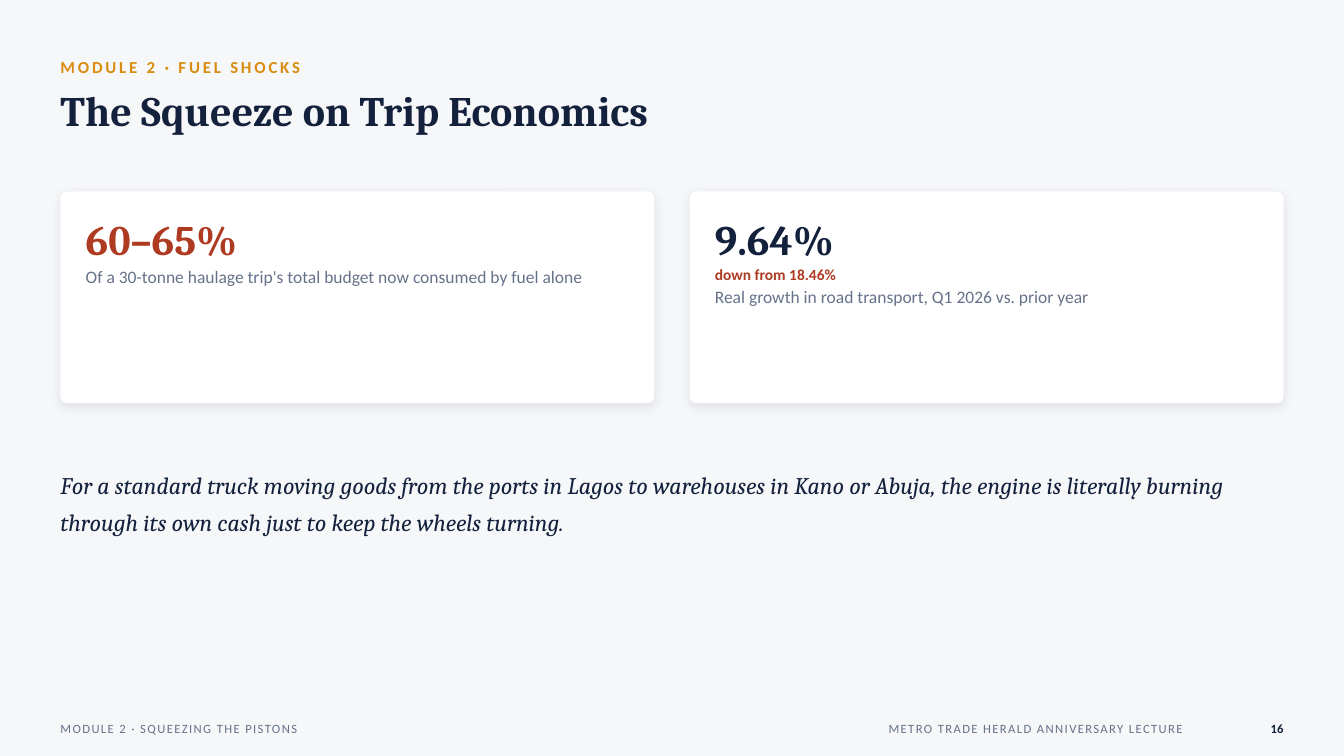
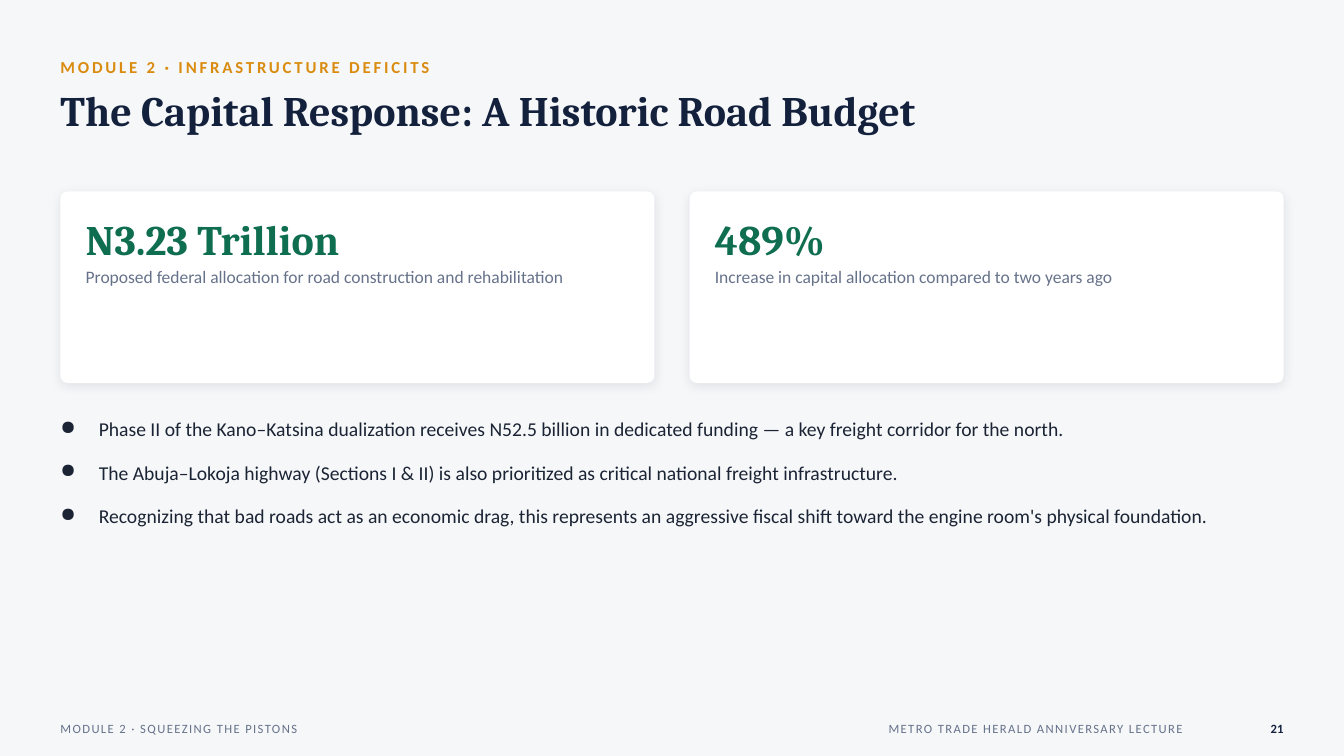
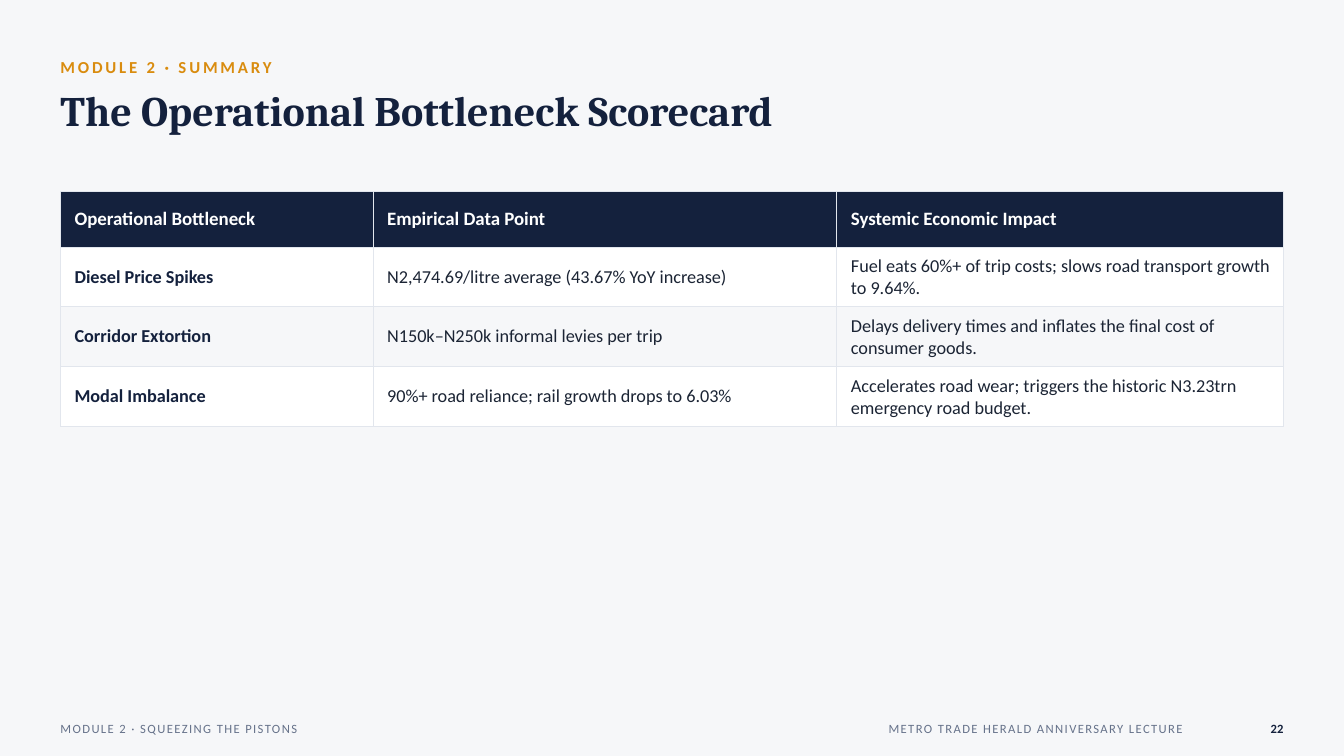
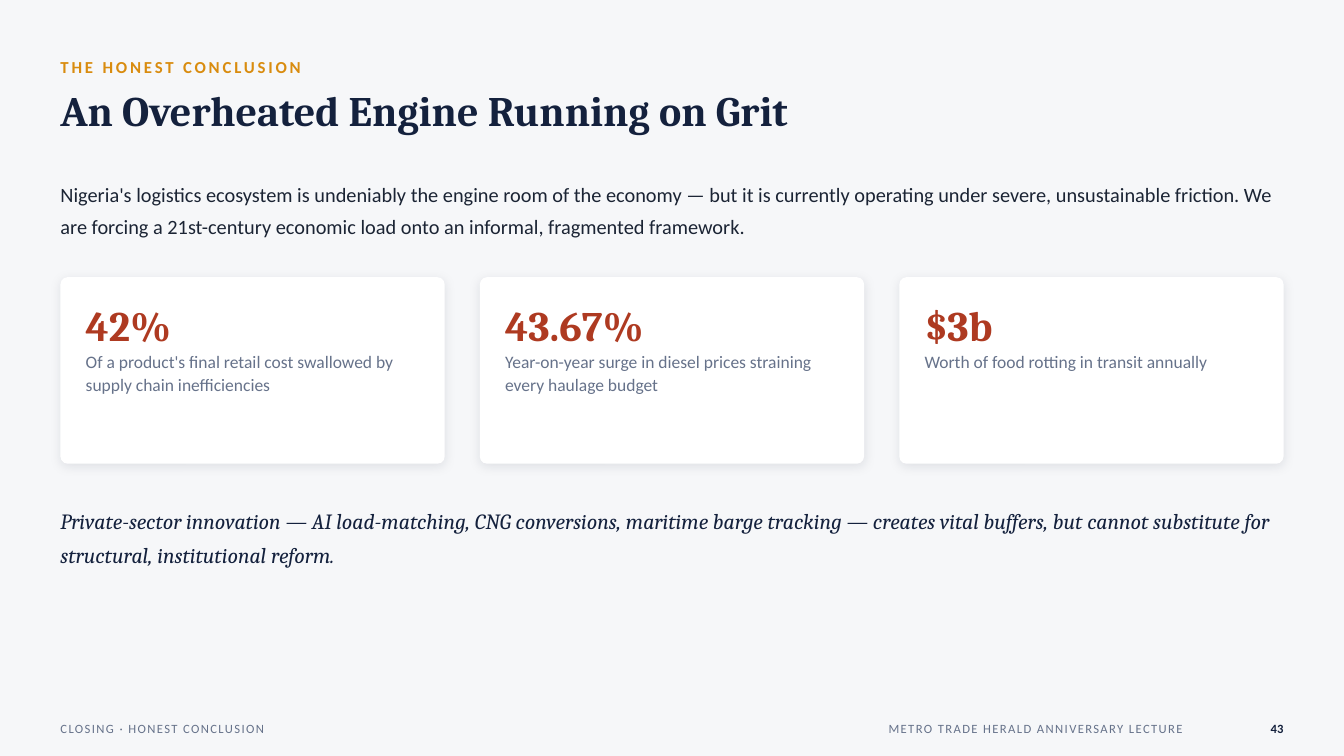
from lxml import etree
from pptx import Presentation
from pptx.dml.color import RGBColor
from pptx.enum.shapes import MSO_SHAPE
from pptx.enum.text import MSO_ANCHOR, PP_ALIGN
from pptx.oxml.ns import qn
from pptx.util import Inches, Pt

ROUNDED = MSO_SHAPE.ROUNDED_RECTANGLE
TOP, MIDDLE = MSO_ANCHOR.TOP, MSO_ANCHOR.MIDDLE
LEFT, RIGHT = PP_ALIGN.LEFT, PP_ALIGN.RIGHT

COLORS = {
    "paper": "F6F7F9", "white": "FFFFFF", "navy": "14213D", "ink": "1B2434",
    "slate": "66728A", "amber": "D98C0F", "rust": "AE3A21", "green": "0F6E4F",
    "border": "E2E6ED", "shadow": "0D1730",
}
SANS, SERIF = "Calibri", "Cambria"
STYLES = {
    "kicker": {"name": SANS, "size": 12, "color": "amber", "bold": True, "tracking": 2},
    "title": {"name": SERIF, "size": 30, "color": "navy", "bold": True},
    "caption": {"name": SANS, "size": 12.5, "color": "slate"},
    "change": {"name": SANS, "size": 11, "color": "rust", "bold": True},
    "body": {"name": SANS, "size": 14, "color": "ink"},
    "intro": {"name": SANS, "size": 14.5, "color": "ink"},
    "quote": {"name": SERIF, "size": 17, "color": "navy", "italic": True},
    "closing": {"name": SERIF, "size": 15.5, "color": "navy", "italic": True},
    "header": {"name": SANS, "size": 13.5, "color": "white", "bold": True},
    "row label": {"name": SANS, "size": 13, "color": "navy", "bold": True},
    "cell": {"name": SANS, "size": 13, "color": "ink"},
    "footer": {"name": SANS, "size": 9, "color": "slate", "tracking": 1},
    "page": {"name": SANS, "size": 9, "color": "navy", "bold": True},
}
for accent in ("navy", "rust", "green"):
    STYLES[f"{accent} figure"] = {**STYLES["title"], "color": accent}

MARGIN, WIDTH = 0.6, 12.13
CARD_GAP, CARD_RADIUS, CARD_PAD_X, CARD_PAD_Y = 0.35, 0.07, 0.25, 0.18
EVENT = "METRO TRADE HERALD ANNIVERSARY LECTURE"
MODULE = "MODULE 2 · SQUEEZING THE PISTONS"


def rgb(color):
    return RGBColor.from_string(COLORS[color])


def add_color(parent, color):
    """Append a solid colour element and return it."""
    return etree.SubElement(parent, qn("a:srgbClr"), val=COLORS[color])


class Deck:
    def __init__(self):
        self.prs = Presentation()
        self.prs.slide_width, self.prs.slide_height = Inches(13.33), Inches(7.5)
        self.slide = None

    def add_slide(self, kicker, title, section, page):
        self.slide = self.prs.slides.add_slide(self.prs.slide_layouts[6])
        background = self.slide.background.fill
        background.solid()
        background.fore_color.rgb = rgb("paper")
        self.text(MARGIN, 0.5, WIDTH, 0.32, [(kicker, "kicker")], MIDDLE)
        self.text(MARGIN, 0.84, WIDTH, 0.75, [(title, "title")])
        for left, width, words, style, align in (
            (MARGIN, 7, section, "footer", LEFT),
            (8.53, 3.2, EVENT, "footer", RIGHT),
            (12.23, 0.5, str(page), "page", RIGHT),
        ):
            self.text(left, 7.08, width, 0.3, [(words, style)], MIDDLE, {"alignment": align})

    def styled_run(self, paragraph, words, style):
        run = paragraph.add_run()
        run.text = words
        for key, value in STYLES[style].items():
            if key == "color":
                run.font.color.rgb = rgb(value)
            elif key == "tracking":
                run._r.get_or_add_rPr().set("spc", str(value * 100))
            else:
                setattr(run.font, key, Pt(value) if key == "size" else value)

    def text(self, left, top, width, height, lines, anchor=TOP, layout=None):
        """Add a box with one paragraph for each (words, style) pair."""
        box = self.slide.shapes.add_textbox(*map(Inches, (left, top, width, height)))
        frame = box.text_frame
        frame.word_wrap, frame.vertical_anchor = True, anchor
        for side in ("left", "top", "right", "bottom"):
            setattr(frame, f"margin_{side}", 0)
        for index, (words, style) in enumerate(lines):
            paragraph = frame.add_paragraph() if index else frame.paragraphs[0]
            for key, value in (layout or {}).items():
                setattr(paragraph, key, value)
            self.styled_run(paragraph, words, style)
        return frame

    def statement(self, top, height, words, style):
        self.text(MARGIN, top, WIDTH, height, [(words, style)], MIDDLE, {"line_spacing": 1.3})

    def bullets(self, top, height, items):
        frame = self.text(MARGIN, top, WIDTH, height, [(item, "body") for item in items],
                          layout={"line_spacing": 1.15, "space_after": Pt(12)})
        for paragraph in frame.paragraphs:
            properties = paragraph._p.get_or_add_pPr()
            properties.set("marL", str(Inches(0.38)))
            properties.set("indent", str(Inches(-0.38)))
            etree.SubElement(properties, qn("a:buChar"), char="●")

    def cards(self, top, height, contents):
        """Spread equal cards over the full content width."""
        width = (WIDTH - CARD_GAP * (len(contents) - 1)) / len(contents)
        for index, lines in enumerate(contents):
            left = MARGIN + index * (width + CARD_GAP)
            card = self.slide.shapes.add_shape(ROUNDED, *map(Inches, (left, top, width, height)))
            card.adjustments[0] = CARD_RADIUS / height
            card.fill.solid()
            card.fill.fore_color.rgb = rgb("white")
            card.line.fill.background()
            self.soft_shadow(card)
            self.text(left + CARD_PAD_X, top + CARD_PAD_Y, width - 2 * CARD_PAD_X,
                      height - 2 * CARD_PAD_Y, lines, layout={"line_spacing": 1.08})

    def soft_shadow(self, shape):
        shape.shadow.inherit = False
        effects = shape._element.spPr.find(qn("a:effectLst"))
        shadow = etree.SubElement(effects, qn("a:outerShdw"), blurRad=str(Pt(8)),
                                  dist=str(Pt(2)), dir="5400000", algn="t", rotWithShape="0")
        etree.SubElement(add_color(shadow, "shadow"), qn("a:alpha"), val="10000")

    def table(self, top, row_height, column_widths, rows):
        table = self.slide.shapes.add_table(
            len(rows), len(column_widths), Inches(MARGIN), Inches(top),
            Inches(sum(column_widths)), Inches(row_height * len(rows))).table
        table.horz_banding = False
        for column, width in zip(table.columns, column_widths):
            column.width = Inches(width)
        for row_index, row in enumerate(rows):
            fill = "navy" if row_index == 0 else ("paper", "white")[row_index % 2]
            for column_index, words in enumerate(row):
                if row_index == 0:
                    style = "header"
                else:
                    style = "cell" if column_index else "row label"
                self.cell(table.cell(row_index, column_index), words, style, fill)

    def cell(self, cell, words, style, fill):
        margins = {"margin_left": 0.14, "margin_right": 0.14,
                   "margin_top": 0.08, "margin_bottom": 0.08}
        for key, value in margins.items():
            setattr(cell, key, Inches(value))
        cell.vertical_anchor = MIDDLE
        self.styled_run(cell.text_frame.paragraphs[0], words, style)
        properties = cell._tc.get_or_add_tcPr()
        for side in ("lnL", "lnR", "lnT", "lnB"):
            border = etree.SubElement(properties, qn(f"a:{side}"), w=str(Pt(0.75)))
            add_color(etree.SubElement(border, qn("a:solidFill")), "border")
        cell.fill.solid()
        cell.fill.fore_color.rgb = rgb(fill)


def main():
    deck = Deck()

    deck.add_slide("MODULE 2 · FUEL SHOCKS", "The Squeeze on Trip Economics", MODULE, 16)
    deck.cards(1.9, 2.1, [
        [("60–65%", "rust figure"),
         ("Of a 30-tonne haulage trip's total budget now consumed by fuel alone", "caption")],
        [("9.64%", "navy figure"),
         ("down from 18.46%", "change"),
         ("Real growth in road transport, Q1 2026 vs. prior year", "caption")],
    ])
    deck.statement(4.3, 1.3, "For a standard truck moving goods from the ports in Lagos to "
                   "warehouses in Kano or Abuja, the engine is literally burning through its "
                   "own cash just to keep the wheels turning.", "quote")

    deck.add_slide("MODULE 2 · INFRASTRUCTURE DEFICITS",
                   "The Capital Response: A Historic Road Budget", MODULE, 21)
    deck.cards(1.9, 1.9, [
        [("N3.23 Trillion", "green figure"),
         ("Proposed federal allocation for road construction and rehabilitation", "caption")],
        [("489%", "green figure"),
         ("Increase in capital allocation compared to two years ago", "caption")],
    ])
    deck.bullets(4.1, 1.9, [
        "Phase II of the Kano–Katsina dualization receives N52.5 billion in dedicated "
        "funding — a key freight corridor for the north.",
        "The Abuja–Lokoja highway (Sections I & II) is also prioritized as critical "
        "national freight infrastructure.",
        "Recognizing that bad roads act as an economic drag, this represents an aggressive "
        "fiscal shift toward the engine room's physical foundation.",
    ])

    deck.add_slide("MODULE 2 · SUMMARY", "The Operational Bottleneck Scorecard", MODULE, 22)
    deck.table(1.9, 0.55, [3.1, 4.6, 4.43], [
        ("Operational Bottleneck", "Empirical Data Point", "Systemic Economic Impact"),
        ("Diesel Price Spikes", "N2,474.69/litre average (43.67% YoY increase)",
         "Fuel eats 60%+ of trip costs; slows road transport growth to 9.64%."),
        ("Corridor Extortion", "N150k–N250k informal levies per trip",
         "Delays delivery times and inflates the final cost of consumer goods."),
        ("Modal Imbalance", "90%+ road reliance; rail growth drops to 6.03%",
         "Accelerates road wear; triggers the historic N3.23trn emergency road budget."),
    ])

    deck.add_slide("THE HONEST CONCLUSION", "An Overheated Engine Running on Grit",
                   "CLOSING · HONEST CONCLUSION", 43)
    deck.statement(1.55, 1, "Nigeria's logistics ecosystem is undeniably the engine room of the "
                   "economy — but it is currently operating under severe, unsustainable "
                   "friction. We are forcing a 21st-century economic load onto an informal, "
                   "fragmented framework.", "intro")
    deck.cards(2.75, 1.85, [
        [(figure, "rust figure"), (caption, "caption")] for figure, caption in (
            ("42%", "Of a product's final retail cost swallowed by supply chain inefficiencies"),
            ("43.67%", "Year-on-year surge in diesel prices straining every haulage budget"),
            ("$3b", "Worth of food rotting in transit annually"),
        )
    ])
    deck.statement(4.85, 0.9, "Private-sector innovation — AI load-matching, CNG conversions, "
                   "maritime barge tracking — creates vital buffers, but cannot substitute for "
                   "structural, institutional reform.", "closing")

    deck.prs.save("out.pptx")


if __name__ == "__main__":
    main()
